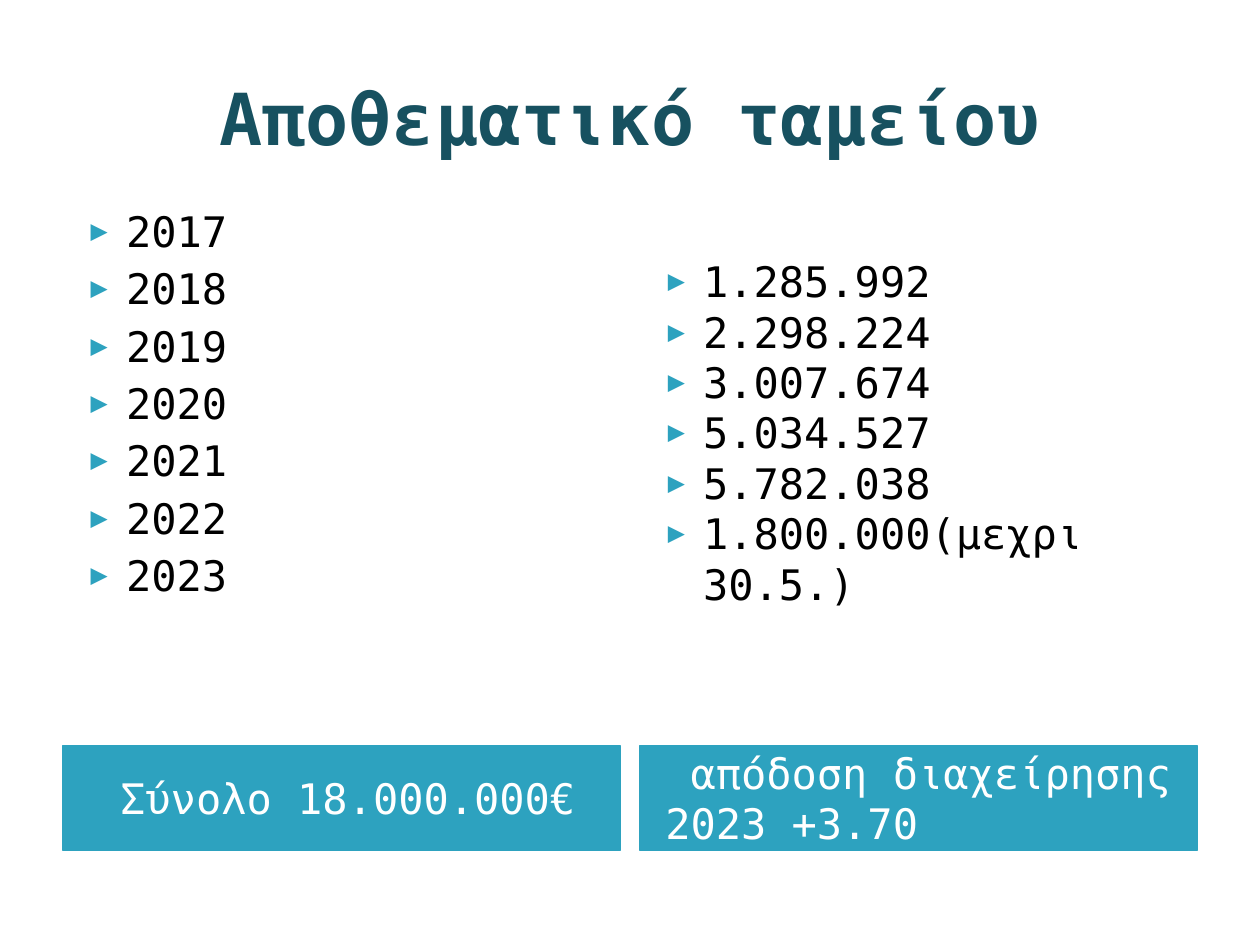
from lxml.etree import SubElement
from pptx import Presentation
from pptx.dml.color import RGBColor
from pptx.enum.text import MSO_ANCHOR, MSO_AUTO_SIZE, PP_ALIGN
from pptx.oxml.ns import qn
from pptx.util import Pt

TITLE = "Αποθεματικό ταμείου"
YEARS = ["2017", "2018", "2019", "2020", "2021", "2022", "2023"]
RESERVES = ["1.285.992", "2.298.224", "3.007.674", "5.034.527", "5.782.038",
            "1.800.000(μεχρι 30.5.)"]
TOTAL = "Σύνολο 18.000.000€"
YIELD = "απόδοση διαχείρησης 2023 +3.70"

FONT = "DejaVu Sans Mono"
TEAL, DARK, BLACK, WHITE = "2DA2BF", "175160", "000000", "FFFFFF"
MARGIN, COLUMN_WIDTH, COLUMN_GAP = 36, 318.25, 11.5
COLUMNS = [MARGIN, MARGIN + COLUMN_WIDTH + COLUMN_GAP]
LIST_TOP, LIST_HEIGHT = 113.75, 310.25
BAND_TOP, BAND_HEIGHT = 426, 60
LINE_HEIGHT, LETTER_WIDTH = 28.8, 14.45


def paint(color_format, color):
    color_format.rgb = RGBColor.from_string(color)


def place(box, left, top, width, height, anchor):
    box.left, box.top, box.width, box.height = map(Pt, (left, top, width, height))
    frame = box.text_frame
    frame.word_wrap = True
    frame.auto_size = MSO_AUTO_SIZE.NONE
    frame.vertical_anchor = anchor
    return frame


def style(para, size, color, bold=False):
    para.font.name = FONT
    para.font.size = Pt(size)
    para.font.bold = bold
    paint(para.font.color, color)


def add_bullet(para):
    properties = para._p.get_or_add_pPr()
    properties.set("marL", str(Pt(28.8)))
    properties.set("indent", str(Pt(-20.16)))
    bullet_color = SubElement(properties, qn("a:buClr"))
    SubElement(bullet_color, qn("a:srgbClr"), val=TEAL)
    SubElement(properties, qn("a:buSzPct"), val="68000")
    SubElement(properties, qn("a:buFont"), typeface=FONT)
    SubElement(properties, qn("a:buChar"), char="▶")


def fill_list(box, left, items, gap, skipped_lines=0):
    frame = place(box, left, LIST_TOP, COLUMN_WIDTH, LIST_HEIGHT, MSO_ANCHOR.TOP)
    frame.margin_top = Pt(3.6 + skipped_lines * LINE_HEIGHT)
    frame.text = "\n".join(items)
    for number, para in enumerate(frame.paragraphs):
        add_bullet(para)
        para.space_before = Pt(gap if number else 0)
        style(para, 24, BLACK)


def fill_band(box, left, text, alignment, indent=0):
    frame = place(box, left, BAND_TOP, COLUMN_WIDTH, BAND_HEIGHT, MSO_ANCHOR.MIDDLE)
    frame.margin_left = Pt(14.4)
    box.fill.solid()
    paint(box.fill.fore_color, TEAL)
    paint(box.line.color, TEAL)
    box.line.width = Pt(0.75)
    frame.text = text
    para = frame.paragraphs[0]
    para.alignment = alignment
    para.space_before = Pt(0)
    para._p.get_or_add_pPr().set("indent", str(Pt(indent)))
    style(para, 24, WHITE)


deck = Presentation()
deck.slide_width, deck.slide_height = Pt(720), Pt(540)
page = deck.slides.add_slide(deck.slide_layouts[4])
title, total_band, year_list, yield_band, reserve_list = page.placeholders

heading = place(title, MARGIN, 21.6, 648, 90, MSO_ANCHOR.MIDDLE)
heading.text = TITLE
heading.paragraphs[0].alignment = PP_ALIGN.CENTER
style(heading.paragraphs[0], 41, DARK, bold=True)

fill_band(total_band, COLUMNS[0], TOTAL, PP_ALIGN.CENTER)
fill_band(yield_band, COLUMNS[1], YIELD, PP_ALIGN.LEFT, LETTER_WIDTH)
fill_list(year_list, COLUMNS[0], YEARS, 4)
fill_list(reserve_list, COLUMNS[1], RESERVES, 0, skipped_lines=1)

deck.save("out.pptx")
